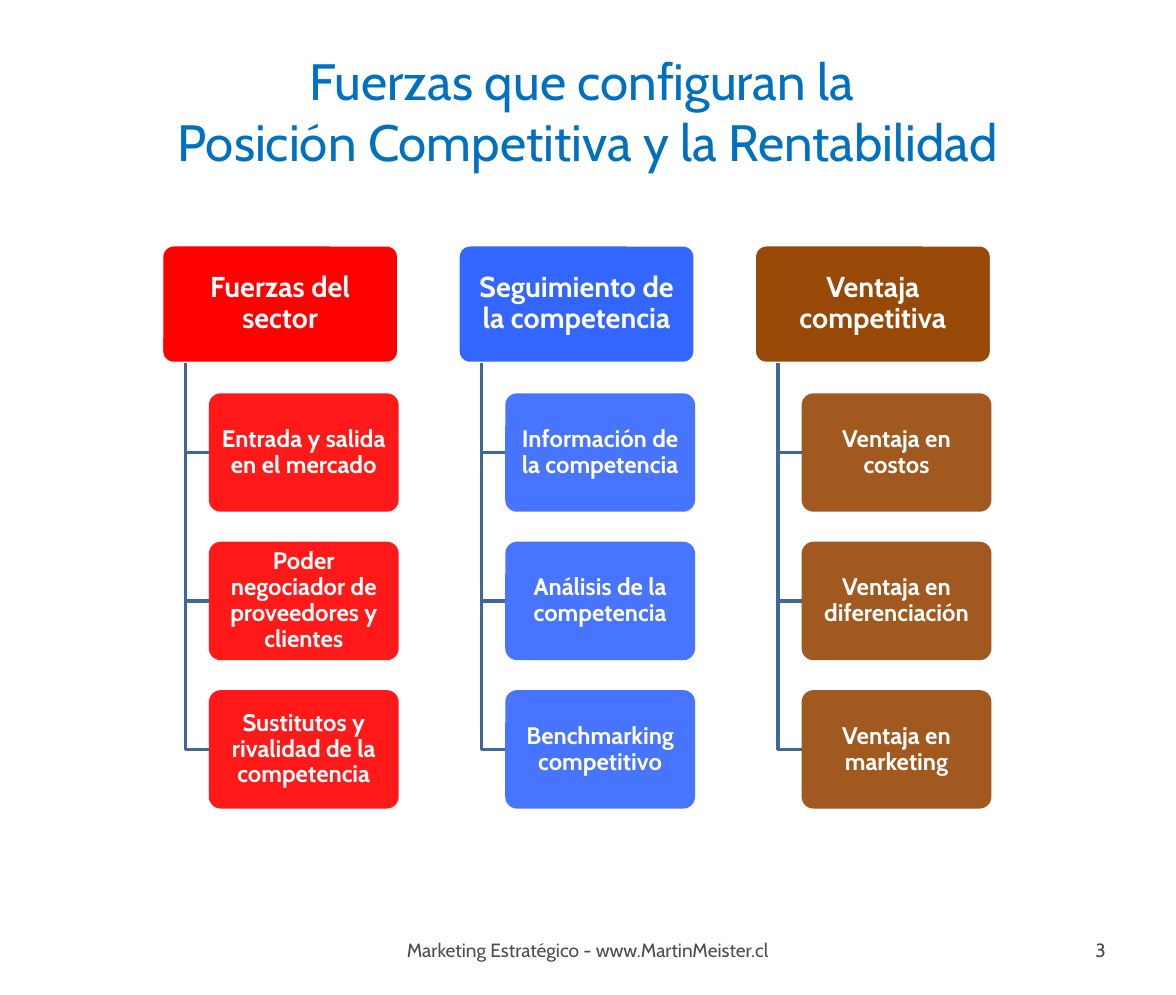
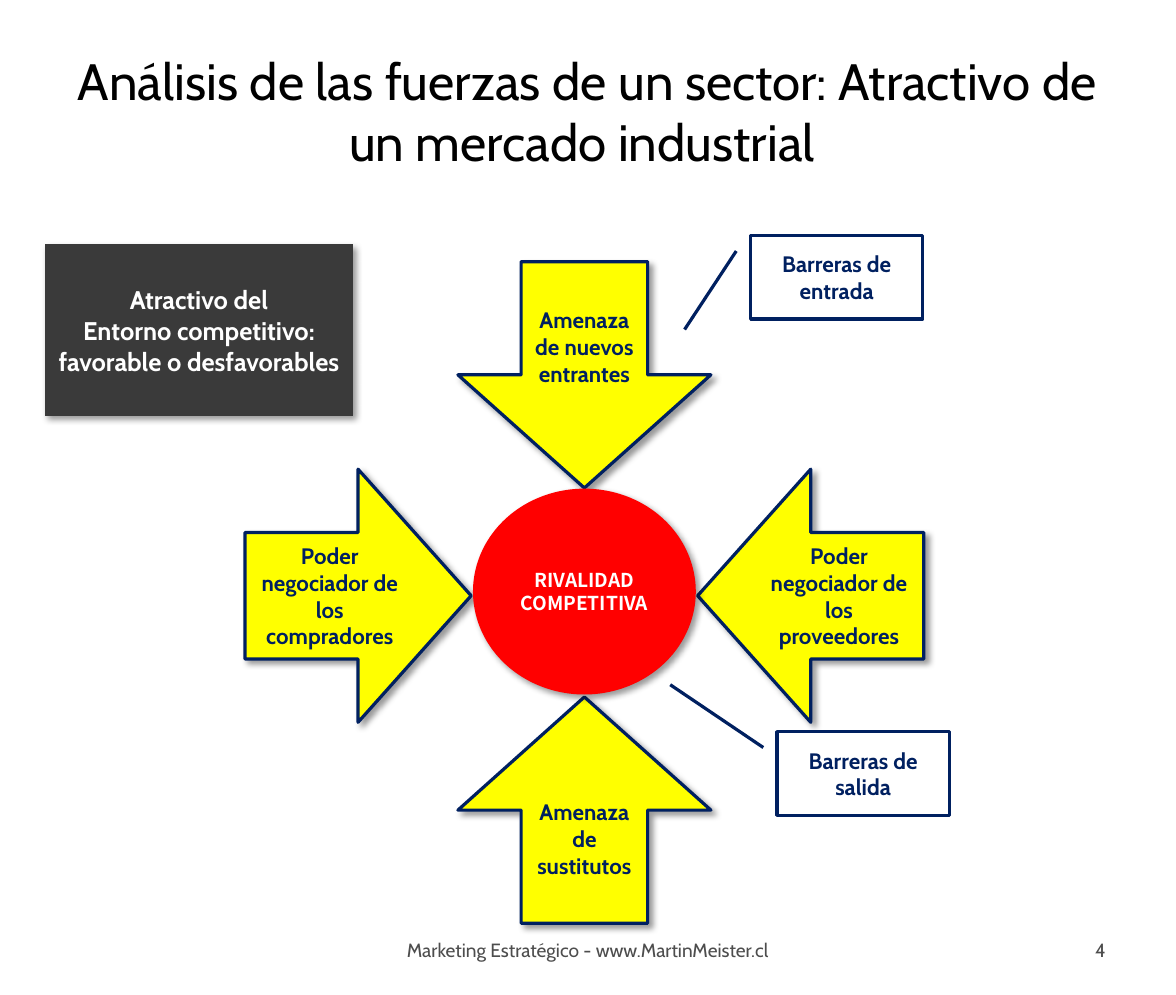
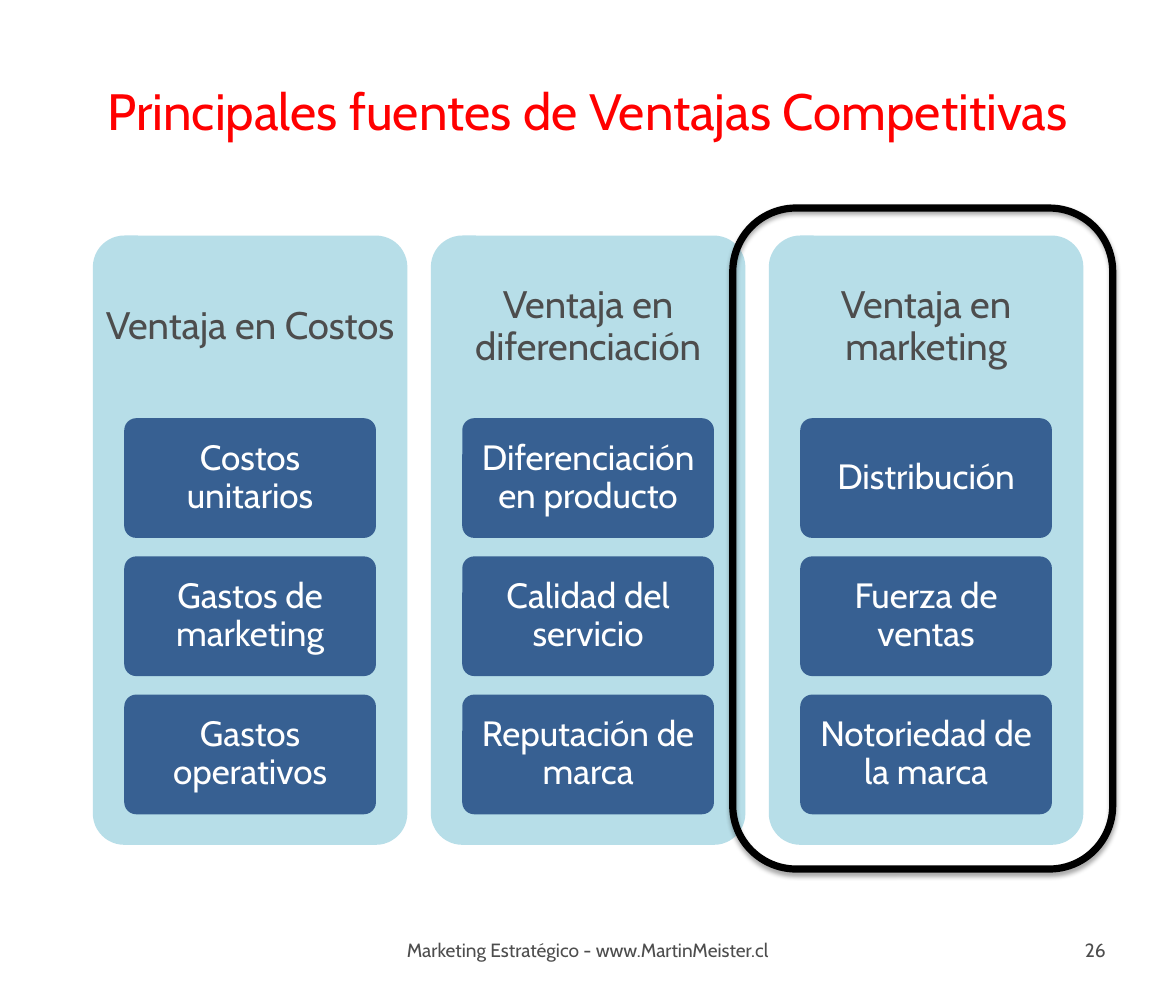
from pptx import Presentation
from pptx.dml.color import RGBColor
from pptx.enum.shapes import MSO_SHAPE
from pptx.enum.text import MSO_ANCHOR, PP_ALIGN
from pptx.oxml.ns import qn
from pptx.util import Pt
from lxml import etree

ROUNDED = MSO_SHAPE.ROUNDED_RECTANGLE
PROCESS = MSO_SHAPE.FLOWCHART_PROCESS
OVAL = MSO_SHAPE.OVAL
CALLOUT = MSO_SHAPE.LINE_CALLOUT_1
RIGHT_ARROW = MSO_SHAPE.RIGHT_ARROW
LEFT_ARROW = MSO_SHAPE.LEFT_ARROW
DOWN_ARROW = MSO_SHAPE.DOWN_ARROW
UP_ARROW = MSO_SHAPE.UP_ARROW
MIDDLE = MSO_ANCHOR.MIDDLE
CENTER, RIGHT = PP_ALIGN.CENTER, PP_ALIGN.RIGHT

FONT = "Cabin"
CIRCLE_FONT = "Noto Sans CJK SC"
WHITE, BLACK, GREY, CHARCOAL = "FFFFFF", "000000", "4D4D4D", "3A3A3A"
RED, BLUE, BROWN, YELLOW = "FF0000", "3366FF", "984807", "FFFF00"
TITLE_BLUE, NAVY, STEEL = "0070C0", "002060", "3F6797"
PANEL_BLUE, ITEM_BLUE = "B7DEE8", "376092"

SLIDE_SIZE = (737.28, 623.52)
TITLE_BOX = (37, 25, 663.12, 88.56)
FOOTER_BOX = (209.8, 578.5, 317.5, 33.12)
NUMBER_BOX = (528.3, 578.5, 172.08, 33.12)
FOOTER = "Marketing Estratégico - www.MartinMeister.cl"
DIAGRAM_SHADOW = {"alpha": 40, "blur": 4, "distance": 3, "angle": 45}
FRAME_SHADOW = {"alpha": 35, "blur": 3.1, "distance": 1.8, "angle": 90}


def color(hex_code):
    return RGBColor.from_string(hex_code)


def points(box):
    return [Pt(value) for value in box]


def write(shape, text, size, ink, bold=False, align=CENTER,
          inset=(7.2, 3.6), spacing=None, font=FONT):
    frame = shape.text_frame
    frame.word_wrap = True
    frame.vertical_anchor = MIDDLE
    frame.margin_left = frame.margin_right = Pt(inset[0])
    frame.margin_top = frame.margin_bottom = Pt(inset[1])
    frame.text = text
    for paragraph in frame.paragraphs:
        paragraph.alignment = align
        paragraph.line_spacing = spacing
        paragraph.font.name = font
        paragraph.font.size = Pt(size)
        paragraph.font.bold = bold
        paragraph.font.color.rgb = color(ink)


def add_text(slide, box, text, size, ink, **style):
    write(slide.shapes.add_textbox(*points(box)), text, size, ink, **style)


def cast_shadow(shape, alpha, blur, distance, angle):
    effects = shape.element.spPr.find(qn("a:effectLst"))
    outer = etree.SubElement(
        effects, qn("a:outerShdw"), blurRad=str(Pt(blur)), dist=str(Pt(distance)),
        dir=str(angle * 60000), algn="tl", rotWithShape="0")
    ink = etree.SubElement(outer, qn("a:srgbClr"), val=BLACK)
    etree.SubElement(ink, qn("a:alpha"), val=str(alpha * 1000))


def paint(shape, fill=None, line=None, width=2, opacity=100, shadow=None):
    shape.shadow.inherit = False
    if fill:
        shape.fill.solid()
        shape.fill.fore_color.rgb = color(fill)
        if opacity < 100:
            ink = shape.element.spPr.find(qn("a:solidFill")).find(qn("a:srgbClr"))
            etree.SubElement(ink, qn("a:alpha"), val=str(opacity * 1000))
    else:
        shape.fill.background()
    if line:
        shape.line.color.rgb = color(line)
        shape.line.width = Pt(width)
    else:
        shape.line.fill.background()
    if shadow:
        cast_shadow(shape, **shadow)


def add_figure(slide, kind, box, adjustments=(), **look):
    shape = slide.shapes.add_shape(kind, *points(box))
    for index, value in enumerate(adjustments):
        shape.adjustments[index] = value
    paint(shape, **look)
    return shape


def add_elbow(slide, start, end):
    (x, y), (end_x, end_y) = points(start), points(end)
    builder = slide.shapes.build_freeform(x, y)
    builder.add_line_segments([(x, end_y), (end_x, end_y)], close=False)
    paint(builder.convert_to_shape(), line=STEEL)


def start_slide(deck, title, title_ink, number):
    slide = deck.slides.add_slide(deck.slide_layouts[6])
    add_text(slide, TITLE_BOX, title, 32, title_ink)
    add_text(slide, FOOTER_BOX, FOOTER, 12, GREY)
    add_text(slide, NUMBER_BOX, str(number), 12, GREY, align=RIGHT)
    return slide


def add_force_tree(slide, box, heading, branches, fill):
    left, top, width, height = box
    root_height, trunk, indent, first, pitch = 74.2, 14.8, 29.6, 93, 93
    root = add_figure(slide, ROUNDED, (left, top, width, root_height), (0.1,),
                      fill=fill, line=WHITE)
    write(root, heading, 18, WHITE, bold=True, inset=(2.7, 1.8), spacing=0.9)
    for row, label in enumerate(branches):
        branch_top = top + first + row * pitch
        branch_height = height - first - (len(branches) - 1) * pitch
        add_elbow(slide, (left + trunk, top + root_height),
                  (left + indent, branch_top + branch_height / 2))
        branch = add_figure(
            slide, ROUNDED,
            (left + indent, branch_top, width - indent, branch_height), (0.1,),
            fill=fill, opacity=90)
        write(branch, label, 15, WHITE, bold=True, inset=(2, 1.4), spacing=0.9)


def build_forces(deck):
    slide = start_slide(
        deck, "Fuerzas que configuran la \vPosición Competitiva y la Rentabilidad",
        TITLE_BLUE, 3)
    trees = [
        ("Fuerzas del sector", RED,
         ["Entrada y salida en el mercado",
          "Poder negociador de proveedores y clientes",
          "Sustitutos y rivalidad de la competencia"]),
        ("Seguimiento de la competencia", BLUE,
         ["Información de la competencia", "Análisis de la competencia",
          "Benchmarking competitivo"]),
        ("Ventaja competitiva", BROWN,
         ["Ventaja en costos", "Ventaja en diferenciación",
          "Ventaja en marketing"]),
    ]
    for column, (heading, fill, branches) in enumerate(trees):
        add_force_tree(slide, (101.4, 153.5, 148.6, 353.2) if column == 0
                       else (101.4 + column * 185.8, 153.5, 148.6, 353.2),
                       heading, branches, fill)


def add_five_forces(slide, box):
    left, top, width, height = box
    length, breadth = 141.8, 158.6
    across = left + (width - breadth) / 2
    down = top + 130
    arrows = [
        (RIGHT_ARROW, (left, down, length, breadth),
         "Poder negociador de los compradores"),
        (LEFT_ARROW, (left + width - length, down, length, breadth),
         "Poder negociador de los proveedores"),
        (DOWN_ARROW, (across, top, breadth, length),
         "Amenaza de nuevos entrantes"),
        (UP_ARROW, (across, top + height - length, breadth, length),
         "Amenaza de sustitutos"),
    ]
    for kind, arrow_box, label in arrows:
        arrow = add_figure(slide, kind, arrow_box, fill=YELLOW, line=NAVY,
                           shadow=DIAGRAM_SHADOW)
        write(arrow, label, 14, NAVY, bold=True)
    circle_width, circle_height = 139.7, 129
    rivalry = add_figure(
        slide, OVAL,
        (left + (width - circle_width) / 2, top + 142.2, circle_width, circle_height),
        fill=RED, shadow=DIAGRAM_SHADOW)
    write(rivalry, "RIVALIDAD COMPETITIVA", 12, WHITE, bold=True,
          spacing=Pt(14.4), font=CIRCLE_FONT)


def add_barrier(slide, box, label, adjustments=()):
    barrier = add_figure(slide, CALLOUT, box, adjustments, line=NAVY)
    write(barrier, label, 14, NAVY, bold=True)


def build_sector(deck):
    slide = start_slide(
        deck,
        "Análisis de las fuerzas de un sector: Atractivo de un mercado industrial ",
        BLACK, 4)
    add_five_forces(slide, (153.6, 164, 425.6, 414.6))
    add_barrier(slide, (470.6, 147.5, 108, 52.5), "Barreras de entrada")
    add_barrier(slide, (487.2, 458.5, 108, 52.5), "Barreras de salida",
                (0.19, -0.08, -0.56, -0.62))
    verdict = add_figure(slide, PROCESS, (28.2, 153.2, 193, 107.5),
                         fill=CHARCOAL, shadow=DIAGRAM_SHADOW)
    write(verdict,
          "Atractivo del\nEntorno competitivo: favorable o desfavorables",
          16, WHITE, bold=True)


def add_advantage_panel(slide, box, heading, sources):
    left, top, width, height = box
    heading_height, margin, item_height, pitch = 114.5, 19.7, 75, 86.6
    add_figure(slide, ROUNDED, box, (0.1,), fill=PANEL_BLUE)
    add_text(slide, (left, top, width, heading_height), heading, 24, GREY,
             inset=(7.2, 7.2), spacing=0.9)
    for row, label in enumerate(sources):
        source = add_figure(
            slide, ROUNDED,
            (left + margin, top + heading_height + row * pitch,
             width - 2 * margin, item_height), (0.1,), fill=ITEM_BLUE)
        write(source, label, 22, WHITE, inset=(4.4, 3.3), spacing=0.9)


def build_advantages(deck):
    slide = start_slide(deck, "Principales fuentes de Ventajas Competitivas", RED, 26)
    panels = [
        ("Ventaja en Costos",
         ["Costos unitarios", "Gastos de marketing", "Gastos operativos"]),
        ("Ventaja en diferenciación",
         ["Diferenciación en producto", "Calidad del servicio",
          "Reputación de marca"]),
        ("Ventaja en marketing",
         ["Distribución", "Fuerza de ventas", "Notoriedad de la marca"]),
    ]
    for column, (heading, sources) in enumerate(panels):
        add_advantage_panel(slide, (58.2 + column * 211.9, 147.6, 197.2, 381.8),
                            heading, sources)
    add_figure(slide, ROUNDED, (459.4, 130.4, 238.2, 414.2), line=BLACK, width=4.5,
               shadow=FRAME_SHADOW)


def main():
    deck = Presentation()
    deck.slide_width, deck.slide_height = points(SLIDE_SIZE)
    build_forces(deck)
    build_sector(deck)
    build_advantages(deck)
    deck.save("out.pptx")


if __name__ == "__main__":
    main()
